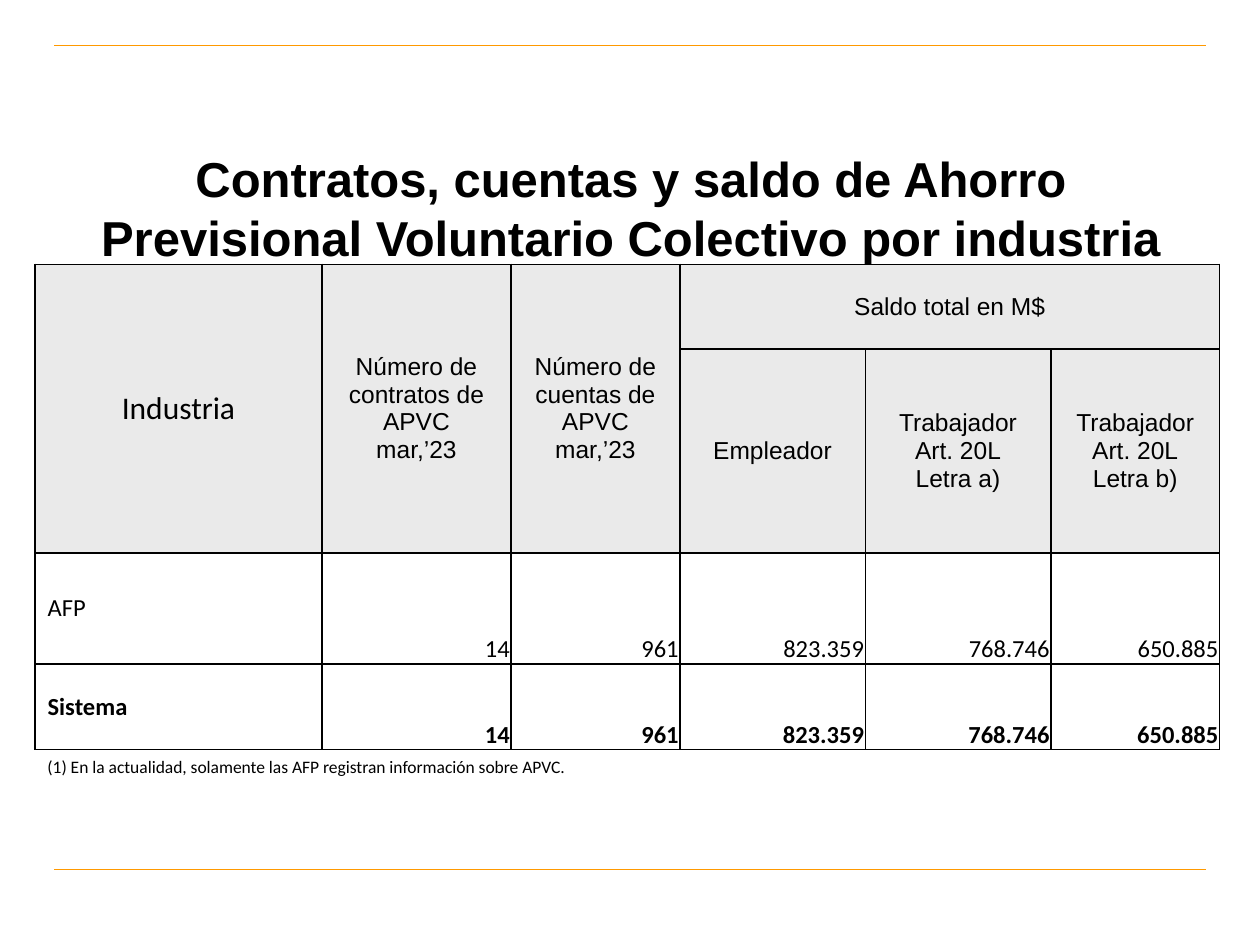
import pptx
import pptx.util
import pptx.dml.color
import pptx.enum.text
import pptx.enum.shapes
import pptx.oxml
import pptx.oxml.ns
from lxml import etree

Pt = pptx.util.Pt
ALIGN = pptx.enum.text.PP_ALIGN
ANCHOR = pptx.enum.text.MSO_ANCHOR
SIZE = pptx.enum.text.MSO_AUTO_SIZE
COLORS = {"ink": "000000", "rule": "FF9900", "head": "EAEAEA", "body": "FFFFFF"}

COLS = [164, 108, 96.5, 106, 106, 96.5]
ROWS = [48.5, 116.5, 63.5, 49]
HEAD = [
    ["Industria", "Número de contratos de APVC\nmar,’23",
     "Número de cuentas de APVC\nmar,’23", "Saldo total en M$", "", ""],
    ["", "", "", "Empleador", "Trabajador\nArt. 20L\nLetra a)",
     "Trabajador\nArt. 20L\nLetra b)"],
]
BODY = [
    ["AFP", "14", "961", "823.359", "768.746", "650.885"],
    ["Sistema", "14", "961", "823.359", "768.746", "650.885"],
]


def rgb(name):
    return pptx.dml.color.RGBColor.from_string(COLORS[name])


def write(frame, text, size=14, font="Arial", bold=False, align=ALIGN.LEFT):
    """Fill a text frame, one paragraph for each line of text."""
    frame.text = text
    for para in frame.paragraphs:
        para.alignment = align
        for run in para.runs:
            run.font.size = Pt(size)
            run.font.name = font
            run.font.bold = bold
            run.font.color.rgb = rgb("ink")


def rule(slide, left, top, width):
    line = slide.shapes.add_connector(
        pptx.enum.shapes.MSO_CONNECTOR.STRAIGHT,
        Pt(left), Pt(top), Pt(left + width), Pt(top))
    line.line.color.rgb = rgb("rule")
    line.line.width = Pt(0.75)
    etree.SubElement(line._element.spPr, pptx.oxml.ns.qn("a:effectLst"))


def title(slide, left, top, width, height):
    shape = slide.shapes.title
    shape.left, shape.top = Pt(left), Pt(top)
    shape.width, shape.height = Pt(width), Pt(height)
    frame = shape.text_frame
    frame.word_wrap = True
    frame.auto_size = SIZE.NONE
    frame.vertical_anchor = ANCHOR.MIDDLE
    frame.margin_bottom = Pt(24)
    write(frame, "Contratos, cuentas y saldo de Ahorro Previsional "
          "Voluntario Colectivo por industria",
          size=28, bold=True, align=ALIGN.CENTER)


def edge(cell):
    """Draw a thin line on all four sides of a cell."""
    props = cell._tc.get_or_add_tcPr()
    for side in "LRTB":
        props.append(pptx.oxml.parse_xml(
            f'<a:ln{side} {pptx.oxml.ns.nsdecls("a")} w="{Pt(1)}"><a:solidFill>'
            f'<a:srgbClr val="{COLORS["ink"]}"/></a:solidFill></a:ln{side}>'))


def style(cell, fill, anchor, pads):
    edge(cell)
    cell.fill.solid()
    cell.fill.fore_color.rgb = rgb(fill)
    cell.vertical_anchor = anchor
    (cell.margin_left, cell.margin_top,
     cell.margin_right, cell.margin_bottom) = map(Pt, pads)


def table(slide, left, top):
    grid = slide.shapes.add_table(
        len(ROWS), len(COLS), Pt(left), Pt(top),
        Pt(sum(COLS)), Pt(sum(ROWS))).table
    grid.first_row = grid.horz_banding = False
    for col, width in zip(grid.columns, COLS):
        col.width = Pt(width)
    for row, height in zip(grid.rows, ROWS):
        row.height = Pt(height)

    wide = (7.2, 3.6, 7.2, 3.6)
    for r, texts in enumerate(HEAD + BODY):
        head = r < len(HEAD)
        for c, text in enumerate(texts):
            cell = grid.cell(r, c)
            number = not head and c > 0
            style(cell, "head" if head else "body",
                  ANCHOR.BOTTOM if number else ANCHOR.MIDDLE,
                  (0.7, 0.7, 0.7, 0) if number else wide)
            if text:
                write(cell.text_frame, text,
                      size=18 if head and c == 0 else 14,
                      font="Arial" if head and c else "Calibri",
                      bold=r == len(ROWS) - 1,
                      align=ALIGN.CENTER if head
                      else ALIGN.RIGHT if number else ALIGN.LEFT)

    for c in range(3):
        grid.cell(0, c).merge(grid.cell(1, c))
    grid.cell(0, 3).merge(grid.cell(0, 5))


def note(slide, left, top, width, height):
    frame = slide.shapes.add_textbox(
        Pt(left), Pt(top), Pt(width), Pt(height)).text_frame
    frame.word_wrap = True
    frame.auto_size = SIZE.SHAPE_TO_FIT_TEXT
    write(frame, "(1) En la actualidad, solamente las AFP registran "
          "información sobre APVC.", size=10, font="Calibri")


def main():
    deck = pptx.Presentation()
    deck.slide_width, deck.slide_height = Pt(720), Pt(540)
    slide = deck.slides.add_slide(deck.slide_layouts[5])
    for top in (26, 497):
        rule(slide, 31, top, 658)
    title(slide, 36.5, 83.5, 648, 90)
    table(slide, 20, 151)
    note(slide, 20, 428.5, 677.5, 19.5)
    deck.save("out.pptx")


if __name__ == "__main__":
    main()
